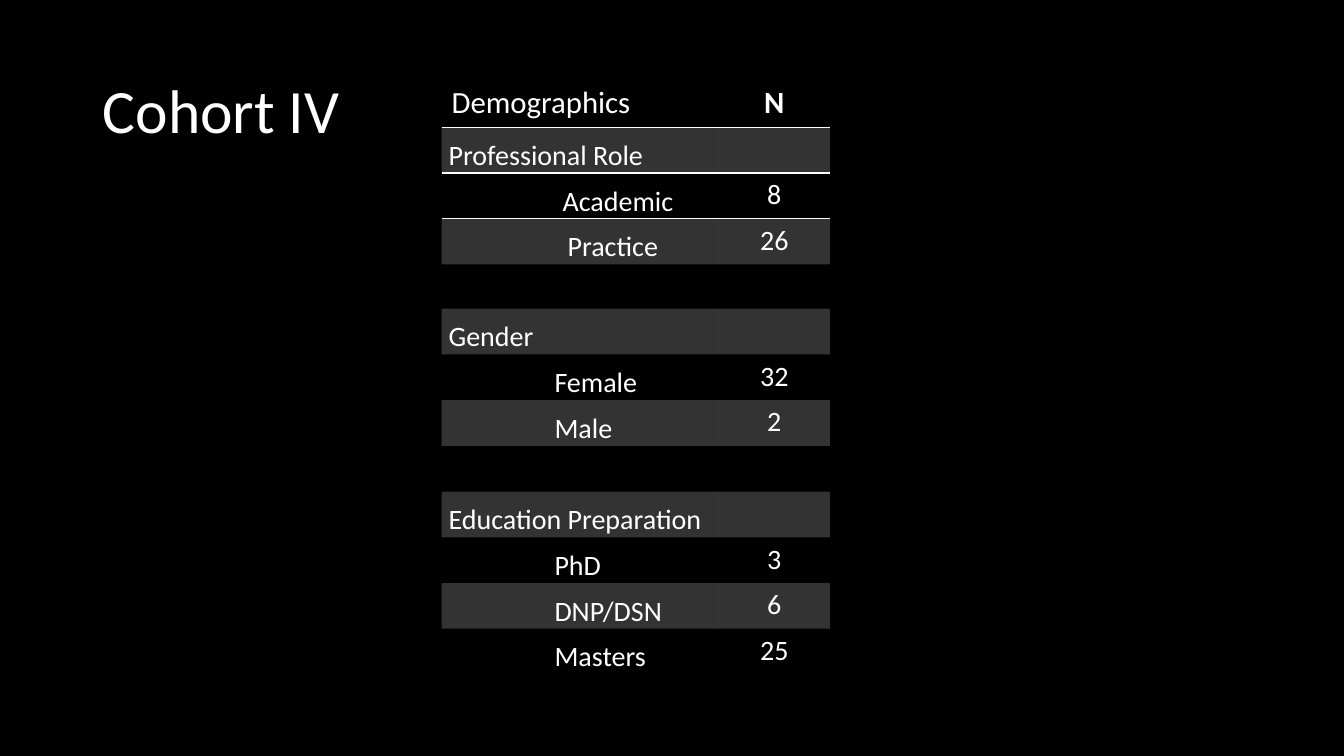
from lxml import etree
from pptx import Presentation
from pptx.dml.color import RGBColor
from pptx.enum.text import MSO_ANCHOR, PP_ALIGN
from pptx.oxml.ns import qn
from pptx.util import Inches, Pt

MIDDLE, BOTTOM = MSO_ANCHOR.MIDDLE, MSO_ANCHOR.BOTTOM
CENTER = PP_ALIGN.CENTER

TITLE = "Cohort IV"
# label, count, indent of the label in inches
ROWS = [
    ("Demographics", "N", 0),
    ("Professional Role", "", 0),
    ("Academic", "8", 1.13),
    ("Practice", "26", 1.18),
    ("", "", 0),
    ("Gender", "", 0),
    ("Female", "32", 1.05),
    ("Male", "2", 1.05),
    ("", "", 0),
    ("Education Preparation", "", 0),
    ("PhD", "3", 1.05),
    ("DNP/DSN", "6", 1.05),
    ("Masters", "25", 1.05),
]
COLORS = {"back": "000000", "text": "FFFFFF", "band": "FFFFFF", "rule": "FFFFFF"}
FONT = "Calibri"
BAND_ALPHA = 20
LEFT, TOP, WIDTH, HEIGHT = 4.38, 0.79, 3.85, 5.9
COLS = (2.75, 1.1)
HEAD, GAP = 0.47, 0.44
FIRST_GAP = 4
RULED = {0: ("lnB",), 1: ("lnT", "lnB"), 2: ("lnT",)}
PLAIN_STYLE = "{2D5ABB26-0587-4C30-8999-92F81FD0307C}"


def rgb(name):
    return RGBColor.from_string(COLORS[name])


def write(frame, text, size, bold=False):
    frame.text = text
    para = frame.paragraphs[0]
    for run in para.runs:
        run.font.name = FONT
        run.font.size = Pt(size)
        run.font.bold = bold
        run.font.color.rgb = rgb("text")
    return para


def shade(cell, banded):
    if not banded:
        cell.fill.background()
        return
    cell.fill.solid()
    cell.fill.fore_color.rgb = rgb("band")
    color = cell._tc.tcPr.find(".//" + qn("a:srgbClr"))
    etree.SubElement(color, qn("a:alpha"), val=str(BAND_ALPHA * 1000))


def rule(cell, sides):
    """Draw thin borders; they must come before the fill in the cell."""
    for spot, side in enumerate(sides):
        line = etree.Element(qn("a:" + side), w=str(Pt(1)))
        fill = etree.SubElement(line, qn("a:solidFill"))
        etree.SubElement(fill, qn("a:srgbClr"), val=COLORS["rule"])
        cell._tc.tcPr.insert(spot, line)


def add_title(slide):
    title = slide.shapes.title
    title.left, title.top = Inches(0.92), Inches(0.4)
    title.width, title.height = Inches(11.5), Inches(1.45)
    title.text_frame.vertical_anchor = MIDDLE
    para = write(title.text_frame, TITLE, 44)
    para.alignment = PP_ALIGN.LEFT
    para.line_spacing = 0.9


def add_grid(slide):
    table = slide.shapes.add_table(
        len(ROWS), len(COLS), Inches(LEFT), Inches(TOP), Inches(WIDTH), Inches(HEIGHT)
    ).table
    table._tbl.tblPr.find(qn("a:tableStyleId")).text = PLAIN_STYLE
    for col, width in zip(table.columns, COLS):
        col.width = Inches(width)

    step = (HEIGHT - HEAD - GAP) / (len(ROWS) - 2)
    special = {0: HEAD, FIRST_GAP: GAP}
    for i, (name, count, indent) in enumerate(ROWS):
        table.rows[i].height = Inches(special.get(i, step))
        label, value = table.cell(i, 0), table.cell(i, 1)
        size = 20 if i else 22
        para = write(label.text_frame, name, size)
        write(value.text_frame, count, size, bold=i == 0).alignment = CENTER
        if i and name:
            label.vertical_anchor = BOTTOM
            label.margin_left = Inches(0.07 + indent)
            label.margin_right = Inches(0.07)
            label.margin_top = label.margin_bottom = 0
            para.line_spacing = 1.07
        for cell in (label, value):
            shade(cell, i % 2 == 1)
            rule(cell, RULED.get(i, ()))


def main():
    deck = Presentation()
    deck.slide_width, deck.slide_height = Inches(13.33), Inches(7.5)
    slide = deck.slides.add_slide(deck.slide_layouts[5])
    slide.background.fill.solid()
    slide.background.fill.fore_color.rgb = rgb("back")
    add_title(slide)
    add_grid(slide)
    deck.save("out.pptx")


if __name__ == "__main__":
    main()
